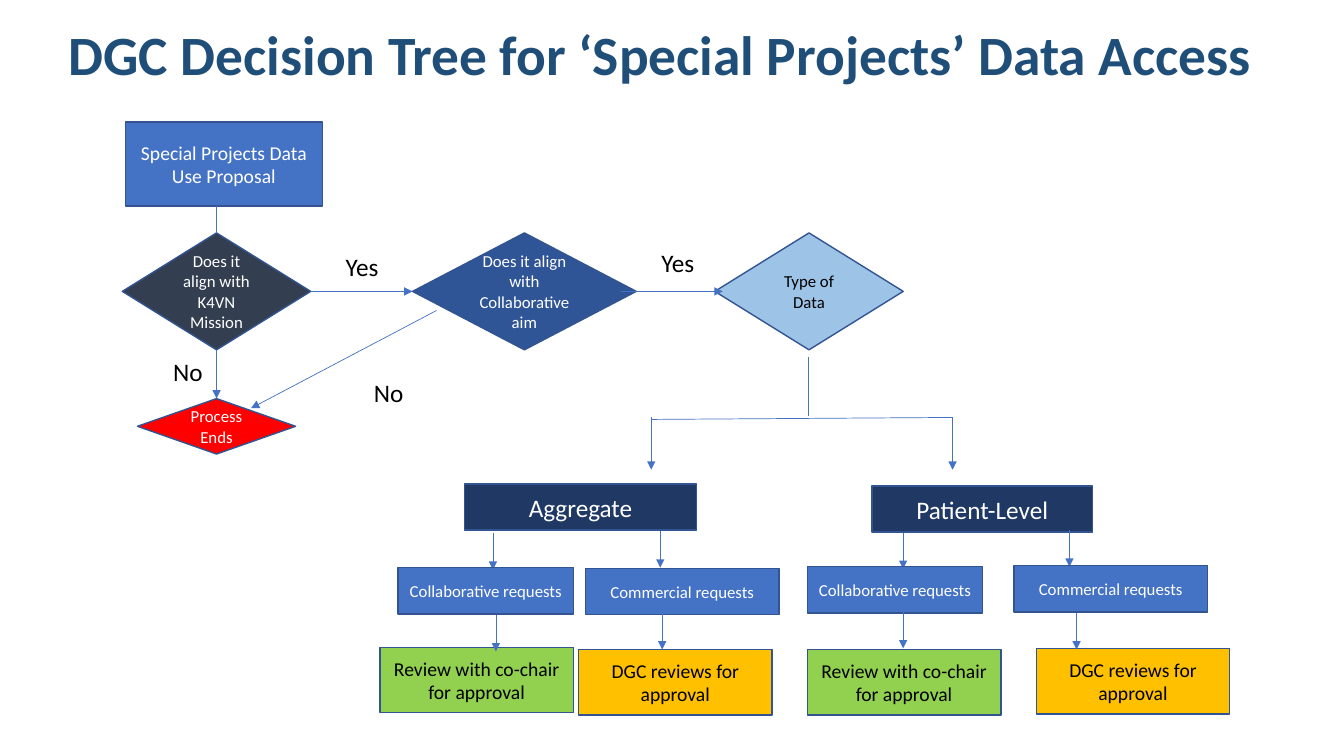
from dataclasses import dataclass

from lxml import etree
from pptx import Presentation
from pptx.dml.color import RGBColor
from pptx.enum import shapes, text
from pptx.oxml import ns
from pptx.util import Pt

FONT = "Calibri"
WHITE, BLACK, NAVY = "FFFFFF", "000000", "203864"
BLUE, OUTLINE = "4472C4", "325491"
GREEN, AMBER = "92D050", "FFC000"
RECTANGLE = shapes.MSO_SHAPE.RECTANGLE
DIAMOND = shapes.MSO_SHAPE.DIAMOND
TOP, LEFT, BOTTOM, RIGHT = range(4)
REQUEST_HEIGHT, REVIEW_SIZE, ARROW_LENGTH = 33, (138.2, 46.8), 26


@dataclass
class Route:
    """One column of a branch; positions are relative to the branch box."""
    request: str
    width: float
    review: str
    fill: str
    request_at: tuple
    review_at: tuple
    request_arrow: tuple
    review_arrow: tuple


def color(value):
    return RGBColor.from_string(value)


def add_run(paragraph, words, size, font_color, bold=False):
    run = paragraph.add_run()
    run.text = words
    run.font.name = FONT
    run.font.size = Pt(size)
    run.font.bold = bold
    run.font.color.rgb = color(font_color)


def add_node(slide, kind, box, words, fill, size=12, font_color=WHITE):
    shape = slide.shapes.add_shape(kind, *map(Pt, box))
    shape.shadow.inherit = False
    shape.fill.solid()
    shape.fill.fore_color.rgb = color(fill)
    shape.line.color.rgb = color(OUTLINE)
    shape.line.width = Pt(1)
    frame = shape.text_frame
    frame.word_wrap = True
    frame.vertical_anchor = text.MSO_ANCHOR.MIDDLE
    paragraph = frame.paragraphs[0]
    paragraph.alignment = text.PP_ALIGN.CENTER
    add_run(paragraph, words, size, font_color)
    return shape


def add_label(slide, left, top, width, words):
    label = slide.shapes.add_textbox(Pt(left), Pt(top), Pt(width), Pt(29))
    label.text_frame.word_wrap = False
    add_run(label.text_frame.paragraphs[0], words, 18, BLACK)


def add_line(slide, start=(0, 0), end=(0, 0), arrow=True):
    line = slide.shapes.add_connector(
        shapes.MSO_CONNECTOR.STRAIGHT, *map(Pt, (*start, *end)))
    line.line.color.rgb = color(BLUE)
    line.line.width = Pt(0.5)
    if arrow:
        outline = line.line._get_or_add_ln()
        etree.SubElement(outline, ns.qn("a:tailEnd"), type="triangle")
    etree.SubElement(line._element.spPr, ns.qn("a:effectLst"))
    return line


def join(slide, source, source_side, target, target_side):
    line = add_line(slide)
    line.begin_connect(source, source_side)
    line.end_connect(target, target_side)


def add_title(slide, box, words):
    title = slide.shapes.add_textbox(*map(Pt, box))
    frame = title.text_frame
    frame.word_wrap = True
    frame.vertical_anchor = text.MSO_ANCHOR.MIDDLE
    paragraph = frame.paragraphs[0]
    paragraph.line_spacing = 0.9
    add_run(paragraph, words, 39.6, "1F4E79", bold=True)


def add_screening(slide, box):
    """Proposal, the row of three questions, and the early exit."""
    left, top, width, height = box
    row, depth, small, wide = top + 79.1, 83.5, 134.6, 159.8
    center, middle = left + small / 2, row + depth / 2
    type_left = left + width - small

    add_node(slide, RECTANGLE, (left + 2.1, top, 141, 59.8),
             "Special Projects Data Use Proposal", BLUE, 14)
    mission = add_node(slide, DIAMOND, (left, row, small, depth),
                       "Does it align with K4VN Mission", "333F50")
    aim = add_node(slide, DIAMOND, (left + 207.3, row, wide, depth),
                   "Does it align with Collaborative aim", "2F5597")
    add_node(slide, DIAMOND, (type_left, row, small, depth),
             "Type of Data", "9DC3E6", font_color=BLACK)
    process_end = add_node(
        slide, DIAMOND, (center - 56.5, top + height - 39.6, 113, 39.6),
        "Process Ends", "FF0000")

    entry = add_line(slide, (center, top + 59.8), (center, row), arrow=False)
    entry.end_connect(mission, TOP)
    join(slide, mission, RIGHT, aim, LEFT)
    join(slide, mission, BOTTOM, process_end, TOP)
    add_line(slide, (type_left - 67, middle), (type_left + 5.7, middle))
    add_line(slide, (left + 224.4, top + 134.5), (left + 91.9, top + 204.3))

    for x, y, label_width, words in [
            (152.4, 88.7, 38, "Yes"), (378, 85.9, 38, "Yes"),
            (29.2, 164, 36, "No"), (172.6, 178.4, 36, "No")]:
        add_label(slide, left + x, top + y, label_width, words)


def add_fork(slide, box):
    """Stem that splits into one arrow for each type of data."""
    left, top, width, height = box
    stem, bar = left + 112.4, top + 43.2
    for x in (left, left + width):
        add_line(slide, (x, bar), (x, top + height))
    add_line(slide, (left, bar + 1.4), (left + width, bar), arrow=False)
    add_line(slide, (stem, top), (stem, top + 42.5), arrow=False)


def add_branch(slide, origin, heading, heading_left, heading_width, routes):
    left, top = origin

    def place(position):
        return left + position[0], top + position[1]

    def drop(position):
        x, y = place(position)
        add_line(slide, (x, y), (x, y + ARROW_LENGTH))

    add_node(slide, RECTANGLE,
             (left + heading_left, top, heading_width, REQUEST_HEIGHT),
             heading, NAVY, 18)
    for route in routes:
        drop(route.request_arrow)
        add_node(slide, RECTANGLE,
                 (*place(route.request_at), route.width, REQUEST_HEIGHT),
                 route.request, BLUE)
        add_node(slide, RECTANGLE, (*place(route.review_at), *REVIEW_SIZE),
                 route.review, route.fill, 14, BLACK)
        drop(route.review_arrow)


def main():
    presentation = Presentation()
    presentation.slide_width, presentation.slide_height = Pt(960), Pt(540)
    slide = presentation.slides.add_slide(presentation.slide_layouts[6])
    add_title(slide, (42, 13.7, 875.5, 54.7),
              "DGC Decision Tree for ‘Special Projects’ Data Access")
    add_screening(slide, (87.4, 87.3, 557.8, 237))
    add_fork(slide, (465.2, 255, 215.2, 80.5))

    collaborative = ("Collaborative requests", 125.3,
                     "Review with co-chair for approval", GREEN)
    commercial = ("Commercial requests", 138.2,
                  "DGC reviews for approval", AMBER)
    add_branch(slide, (271.4, 345.7), "Aggregate", 60.5, 165.6, [
        Route(*collaborative, (13, 59.8), (0, 116.6),
              (80.7, 35.3), (82.8, 93.6)),
        Route(*commercial, (146.9, 60.5), (141.9, 118.1),
              (200.2, 33.8), (201.6, 92.2))])
    add_branch(slide, (576.7, 347.2), "Patient-Level", 46.1, 157.7, [
        Route(*collaborative, (0, 57.6), (0, 116.7),
              (68.4, 33.2), (68.4, 90)),
        Route(*commercial, (147.6, 56.9), (163.5, 116),
              (187.2, 31.7), (192.3, 90.8))])
    presentation.save("out.pptx")


if __name__ == "__main__":
    main()
